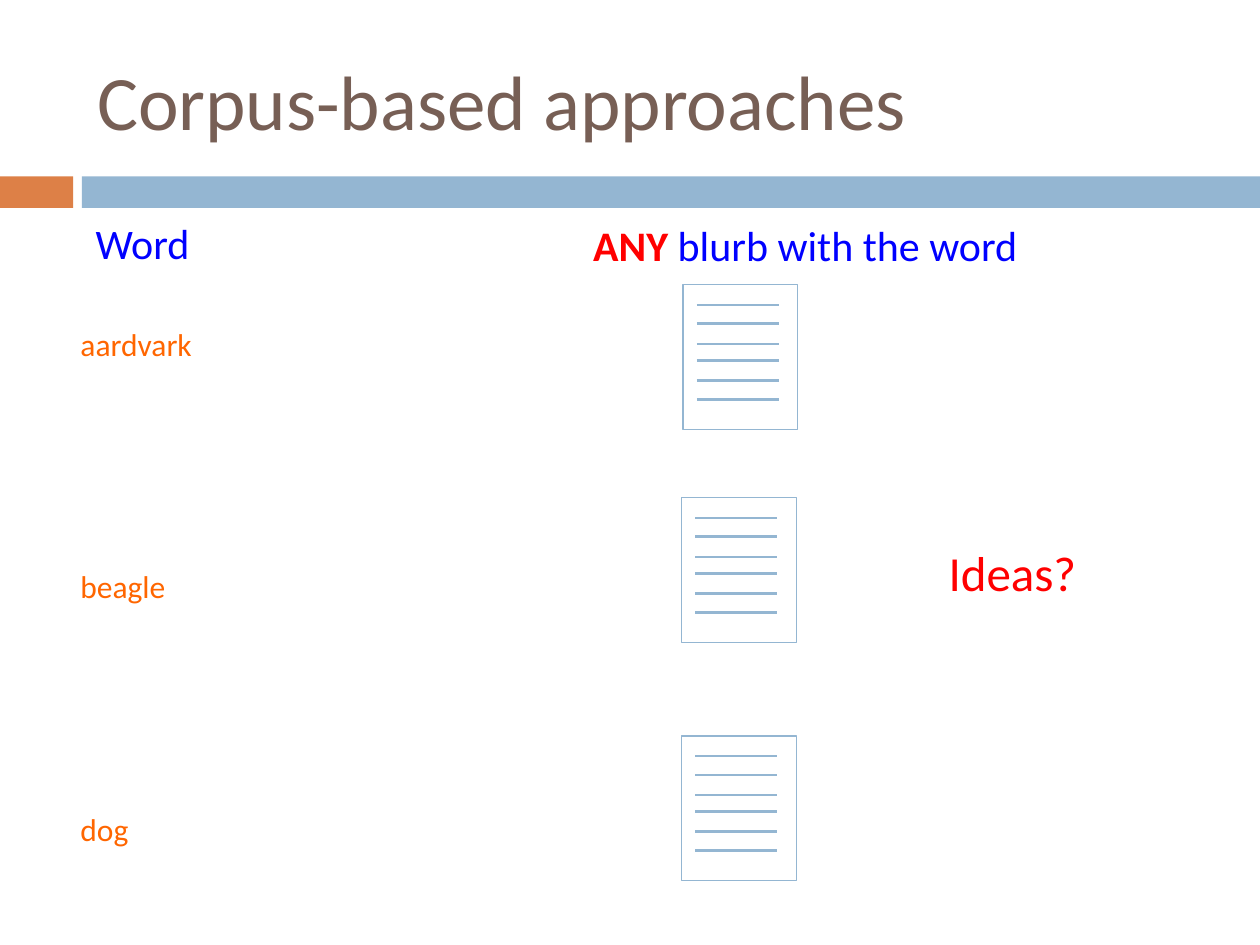
import pptx
import pptx.util
import pptx.dml.color
import pptx.enum.shapes
import pptx.enum.text
import pptx.oxml.ns
import lxml.etree

theme = {
    "font": "Calibri",
    "orange": "DD8047", "blue": "94B6D2", "brown": "775F55",
    "word": "FF6600", "heading": "0000FF", "accent": "FF0000",
    "title_size": 44, "idea_size": 28, "heading_size": 24, "word_size": 18,
    "outline": 0.79, "stroke": 1.5,
}

deck = pptx.Presentation()
deck.slide_width = pptx.util.Inches(10)
deck.slide_height = pptx.util.Inches(7.5)
column = deck.slide_width / 100
row = deck.slide_height / 75
page = deck.slides.add_slide(deck.slide_layouts[5])


def grid(left, top, width, height):
    return [round(left * column), round(top * row), round(width * column), round(height * row)]


def write(box, size, anchor, *pieces):
    frame = box.text_frame
    settings = {"word_wrap": True, "vertical_anchor": anchor,
                "auto_size": pptx.enum.text.MSO_AUTO_SIZE.NONE}
    for name, value in settings.items():
        setattr(frame, name, value)
    para = frame.paragraphs[0]
    para.alignment = pptx.enum.text.PP_ALIGN.LEFT
    for text, color, bold in pieces:
        span = para.add_run()
        span.text = text
        formats = {"name": theme["font"], "size": pptx.util.Pt(theme[size]), "bold": bold}
        for name, value in formats.items():
            setattr(span.font, name, value)
        span.font.color.rgb = pptx.dml.color.RGBColor.from_string(theme[color])


rectangle = pptx.enum.shapes.MSO_SHAPE.RECTANGLE
straight = pptx.enum.shapes.MSO_CONNECTOR.STRAIGHT
top_anchor = pptx.enum.text.MSO_ANCHOR.TOP
blue = pptx.dml.color.RGBColor.from_string(theme["blue"])

for left, width, color in [(0, 5.8, "orange"), (6.5, 93.5, "blue")]:
    band = page.shapes.add_shape(rectangle, *grid(left, 14, width, 2.5))
    band.shadow.inherit = False
    band.fill.solid()
    band.fill.fore_color.rgb = pptx.dml.color.RGBColor.from_string(theme[color])
    band.line.fill.background()

title = page.shapes.title
for name, value in zip(("left", "top", "width", "height"), grid(6.7, 2.5, 89.2, 10.8)):
    setattr(title, name, value)
write(title, "title_size", pptx.enum.text.MSO_ANCHOR.MIDDLE,
      ("Corpus-based approaches", "brown", False))

labels = [
    ((6.6, 16.8, 15.8, 5), "heading_size", [("Word", "heading", False)]),
    ((46.1, 16.9, 39, 5), "heading_size",
     [("ANY", "accent", True), (" blurb with the word", "heading", False)]),
    ((74.3, 42.6, 25, 5.7), "idea_size", [("Ideas?", "accent", False)]),
]
for index, word in enumerate(["aardvark", "beagle", "dog"]):
    labels.append(((5.4, 25.3 + 19.25 * index, 21.4, 4), "word_size", [(word, "word", False)]))
for place, size, pieces in labels:
    write(page.shapes.add_textbox(*grid(*place)), size, top_anchor, *pieces)

for left, top in [(54.2, 22.6), (54.1, 39.5), (54.1, 58.4)]:
    document = page.shapes.add_group_shape()
    sheet = document.shapes.add_shape(rectangle, *grid(left, top, 9.1, 11.5))
    sheet.shadow.inherit = False
    sheet.fill.background()
    sheet.line.color.rgb = blue
    sheet.line.width = pptx.util.Pt(theme["outline"])
    for drop in [1.6, 3.1, 4.7, 6, 7.6, 9.1]:
        start_x, start_y, length, rise = grid(left + 1.1, top + drop, 6.5, 0)
        stroke = document.shapes.add_connector(
            straight, start_x, start_y, start_x + length, start_y + rise)
        stroke.line.color.rgb = blue
        stroke.line.width = pptx.util.Pt(theme["stroke"])
        lxml.etree.SubElement(stroke._element.spPr, pptx.oxml.ns.qn("a:effectLst"))

deck.save("out.pptx")
